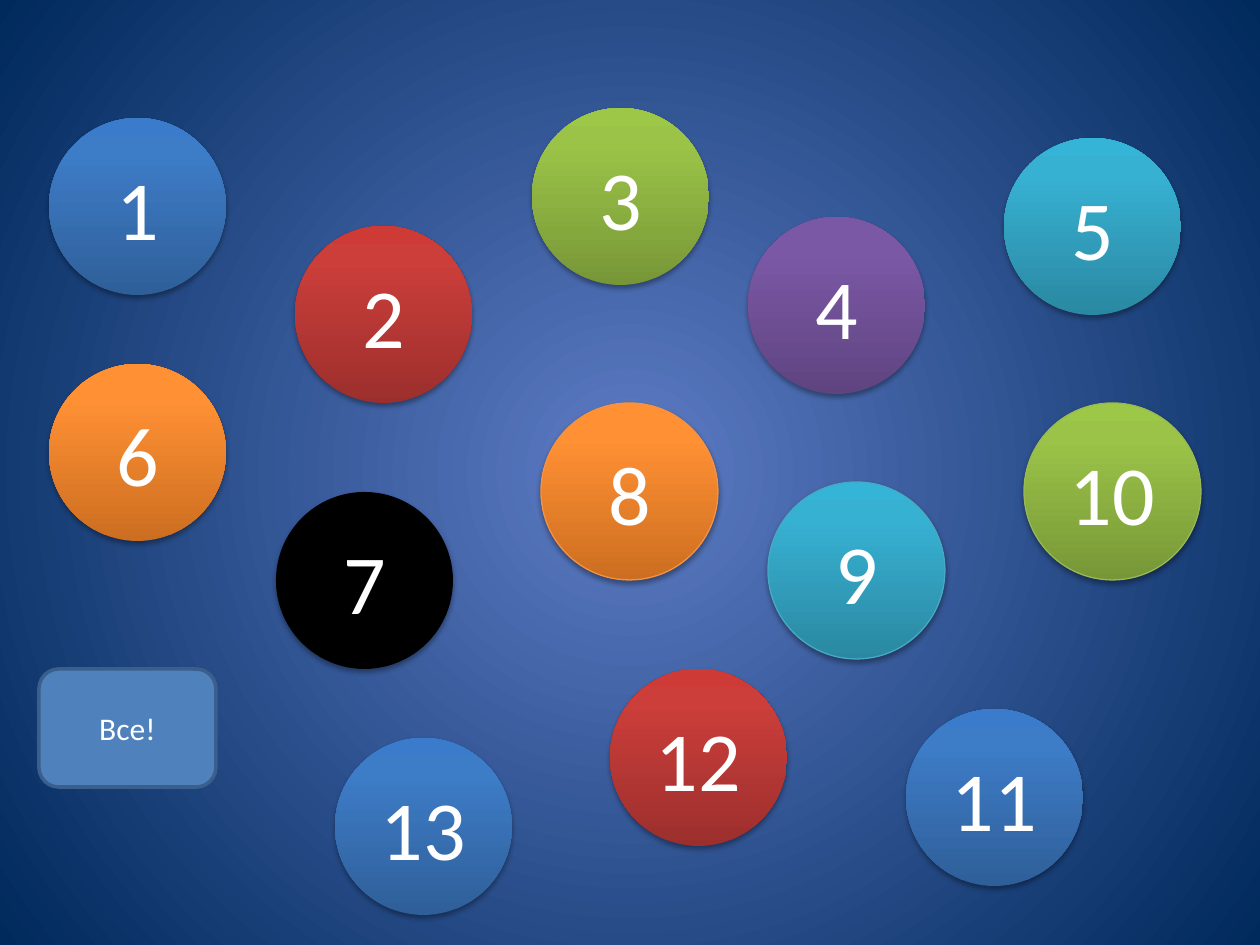
import dataclasses

import lxml.etree
import pptx
import pptx.dml.color
import pptx.enum.shapes
import pptx.enum.text
import pptx.oxml
import pptx.oxml.ns
import pptx.util

SCALE = 914400 / 126
SIZE = 177
KIND = pptx.enum.shapes.MSO_SHAPE


@dataclasses.dataclass(frozen=True)
class Theme:
    font: str = "Calibri"
    big: int = 48
    small: int = 18
    text: str = "FFFFFF"
    black: str = "000000"
    face: str = "4F81BD"
    edge: str = "3A5F8C"
    back: tuple = ((0, "5E7CC5"), (100, "00295C"))
    blue: tuple = ((0, "2F5F99"), (80, "3D7CC7"), (100, "3A7CCB"))
    red: tuple = ((0, "9C2F2D"), (80, "CB3E3A"), (100, "CE3B37"))
    green: tuple = ((0, "779737"), (80, "9BC348"), (100, "9DC746"))
    purple: tuple = ((0, "5F4480"), (80, "7B58A6"), (100, "7C57A8"))
    teal: tuple = ((0, "2A88A2"), (80, "37B1D2"), (100, "34B4D6"))
    orange: tuple = ((0, "CC6E20"), (80, "FF9034"), (100, "FF9136"))
    rim_orange: str = "F69240"
    rim_teal: str = "46AAC5"
    rim_green: str = "98B955"


THEME = Theme()

BALLS = [
    ("1", 49, 118, THEME.blue, None),
    ("2", 295, 226, THEME.red, None),
    ("3", 532, 108, THEME.green, None),
    ("4", 748, 217, THEME.purple, None),
    ("5", 1004, 138, THEME.teal, None),
    ("6", 49, 364, THEME.orange, None),
    ("7", 276, 492, THEME.black, None),
    ("8", 541, 403, THEME.orange, THEME.rim_orange),
    ("9", 768, 482, THEME.teal, THEME.rim_teal),
    ("10", 1024, 403, THEME.green, THEME.rim_green),
    ("11", 906, 709, THEME.blue, None),
    ("12", 610, 669, THEME.red, None),
    ("13", 335, 738, THEME.blue, None),
]

UP = '<a:lin ang="16200000" scaled="0"/>'
ROUND = (
    '<a:path path="circle">'
    '<a:fillToRect l="50000" t="50000" r="50000" b="50000"/></a:path>'
)


def px(count):
    return pptx.util.Emu(round(count * SCALE))


def rgb(code):
    return pptx.dml.color.RGBColor.from_string(code)


def node(tag, body, attrs=""):
    space = pptx.oxml.ns.nsdecls("a")
    return pptx.oxml.parse_xml(f"<a:{tag} {space} {attrs}>{body}</a:{tag}>")


def blend(owner, fill, stops, course):
    fill.gradient()
    old = owner.xpath(".//a:gradFill")[0]
    marks = "".join(
        f'<a:gs pos="{spot * 1000}"><a:srgbClr val="{code}"/></a:gs>'
        for spot, code in stops
    )
    new = node("gradFill", f"<a:gsLst>{marks}</a:gsLst>{course}", 'rotWithShape="1"')
    old.getparent().replace(old, new)


def paint(shape, fill):
    if isinstance(fill, str):
        shape.fill.solid()
        shape.fill.fore_color.rgb = rgb(fill)
    else:
        blend(shape._element.spPr, shape.fill, fill, UP)


def outline(shape, code, width):
    if code:
        shape.line.color.rgb = rgb(code)
        shape.line.width = pptx.util.Pt(width)
    else:
        shape.line.fill.background()


def shade(shape):
    effects = shape._element.spPr.find(pptx.oxml.ns.qn("a:effectLst"))
    tone = f'<a:srgbClr val="{THEME.black}"><a:alpha val="35000"/></a:srgbClr>'
    attrs = 'blurRad="40000" dist="23000" dir="5400000" rotWithShape="0"'
    effects.append(node("outerShdw", tone, attrs))


def write(shape, text, *, size, color=THEME.text, font=THEME.font):
    frame = shape.text_frame
    frame.word_wrap = True
    frame.vertical_anchor = pptx.enum.text.MSO_ANCHOR.MIDDLE
    para = frame.paragraphs[0]
    para.alignment = pptx.enum.text.PP_ALIGN.CENTER
    run = para.add_run()
    run.text = text
    run.font.name = font
    run.font.size = pptx.util.Pt(size)
    run.font.color.rgb = rgb(color)


def form(slide, kind, left, top, width, height, fill, line, weight):
    shape = slide.shapes.add_shape(kind, px(left), px(top), px(width), px(height))
    shape.shadow.inherit = False
    paint(shape, fill)
    outline(shape, line, weight)
    return shape


def ball(slide, label, left, top, fill, rim):
    shape = form(slide, KIND.OVAL, left, top, SIZE, SIZE, fill, rim, 0.75)
    shade(shape)
    write(shape, label, size=THEME.big)


def button(slide, label, left, top, width, height):
    shape = form(
        slide, KIND.ROUNDED_RECTANGLE, left, top, width, height,
        THEME.face, THEME.edge, 2,
    )
    write(shape, label, size=THEME.small)


def main():
    deck = pptx.Presentation()
    deck.slide_width, deck.slide_height = px(1260), px(945)
    slide = deck.slides.add_slide(deck.slide_layouts[6])
    blend(slide._element, slide.background.fill, THEME.back, ROUND)
    for entry in BALLS:
        ball(slide, *entry)
    button(slide, "Все!", 39, 669, SIZE, 118)
    deck.save("out.pptx")


if __name__ == "__main__":
    main()
